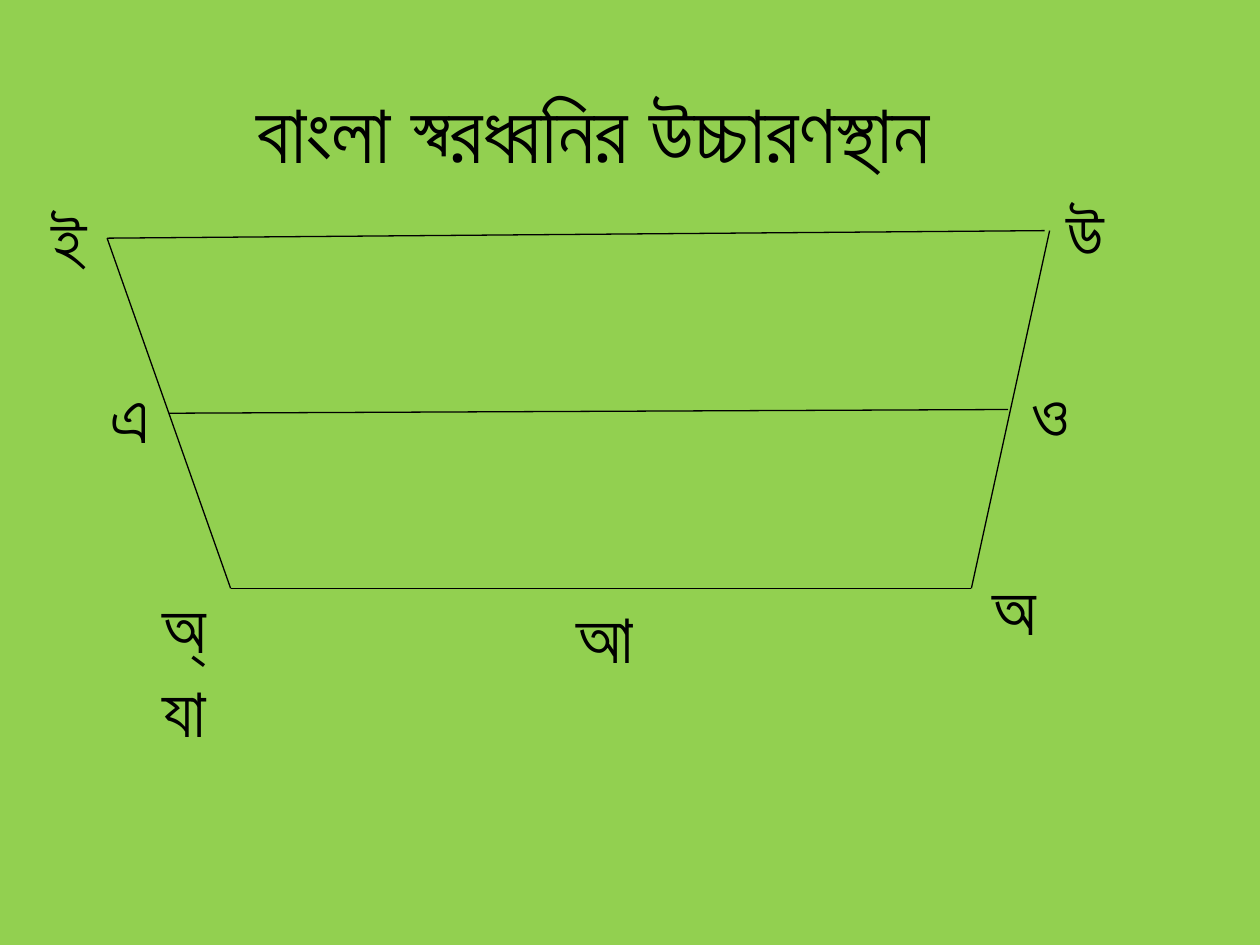
from lxml.etree import SubElement
from pptx import Presentation
from pptx.dml.color import RGBColor
from pptx.enum.shapes import MSO_CONNECTOR
from pptx.enum.text import MSO_AUTO_SIZE, PP_ALIGN
from pptx.oxml.ns import qn
from pptx.util import Pt

COLORS = {"background": "92D050", "ink": "000000"}
FONT = "Calibri"
INSET = 7.2
LABEL_WIDTH, LABEL_HEIGHT = 44.6, 55.4


def add_text(slide, wording, box, size, align=PP_ALIGN.LEFT, indent=0):
    """Place one line of text in a box of left, top, width and height."""
    label = slide.shapes.add_textbox(*map(Pt, box))
    frame = label.text_frame
    frame.word_wrap = True
    frame.auto_size = MSO_AUTO_SIZE.SHAPE_TO_FIT_TEXT
    frame.margin_left = Pt(INSET + indent)
    paragraph = frame.paragraphs[0]
    paragraph.alignment = align
    run = paragraph.add_run()
    run.text = wording
    run.font.size = Pt(size)
    run.font.name = FONT
    run.font.color.rgb = RGBColor.from_string(COLORS["ink"])


def add_line(slide, start, end):
    """Draw a thin line between two points."""
    line = slide.shapes.add_connector(MSO_CONNECTOR.STRAIGHT, *map(Pt, (*start, *end)))
    line.line.width = Pt(0.75)
    line.line.color.rgb = RGBColor.from_string(COLORS["ink"])
    SubElement(line._element.spPr, qn("a:effectLst"))


def add_title(slide, box):
    """Write the centred heading."""
    add_text(slide, "বাংলা স্বরধ্বনির উচ্চারণস্থান", box, 48, PP_ALIGN.CENTER)


def add_vowel_chart(slide, box):
    """Draw the vowel trapezium in its box and label its vowels."""
    left, top, width, height = box
    front_high, back_high = (left, top + 4.3), (left + width, top)
    front_low, back_low = (left + 70.6, top + height), (left + 493.9, top + height)
    front_mid = ((front_high[0] + front_low[0]) / 2, (front_high[1] + front_low[1]) / 2)
    high_end, mid_end = (left + 535.7, top), (left + 514.8, top + height / 2)
    for start, end in (
        (front_high, high_end),
        (back_low, back_high),
        (front_high, front_low),
        (front_mid, mid_end),
        (front_low, back_low),
    ):
        add_line(slide, start, end)

    vowels = (
        ("ই", -44.6, -23.1, LABEL_WIDTH, 5.4),
        ("উ", 535.7, -27.4, LABEL_WIDTH, 5.4),
        ("এ", -5, 78.4, LABEL_WIDTH, 0),
        ("অ্যা", 24.5, 198, 49.7, 0),
        ("ও", 521.3, 76.3, LABEL_WIDTH, 0),
        ("অ", 499, 187.9, LABEL_WIDTH, 0),
        ("আ", 261.4, 203.7, LABEL_WIDTH, 0),
    )
    for vowel, across, down, label_width, indent in vowels:
        label_box = (left + across, top + down, label_width, LABEL_HEIGHT)
        add_text(slide, vowel, label_box, 40, indent=indent)


def main():
    """Build the slide and save it."""
    presentation = Presentation()
    presentation.slide_width, presentation.slide_height = Pt(720), Pt(540)
    slide = presentation.slides.add_slide(presentation.slide_layouts[6])
    fill = slide.background.fill
    fill.solid()
    fill.fore_color.rgb = RGBColor.from_string(COLORS["background"])
    add_vowel_chart(slide, (61.2, 131.8, 538.6, 204.4))
    add_title(slide, (102.2, 41.8, 473.8, 65.5))
    presentation.save("out.pptx")


if __name__ == "__main__":
    main()
